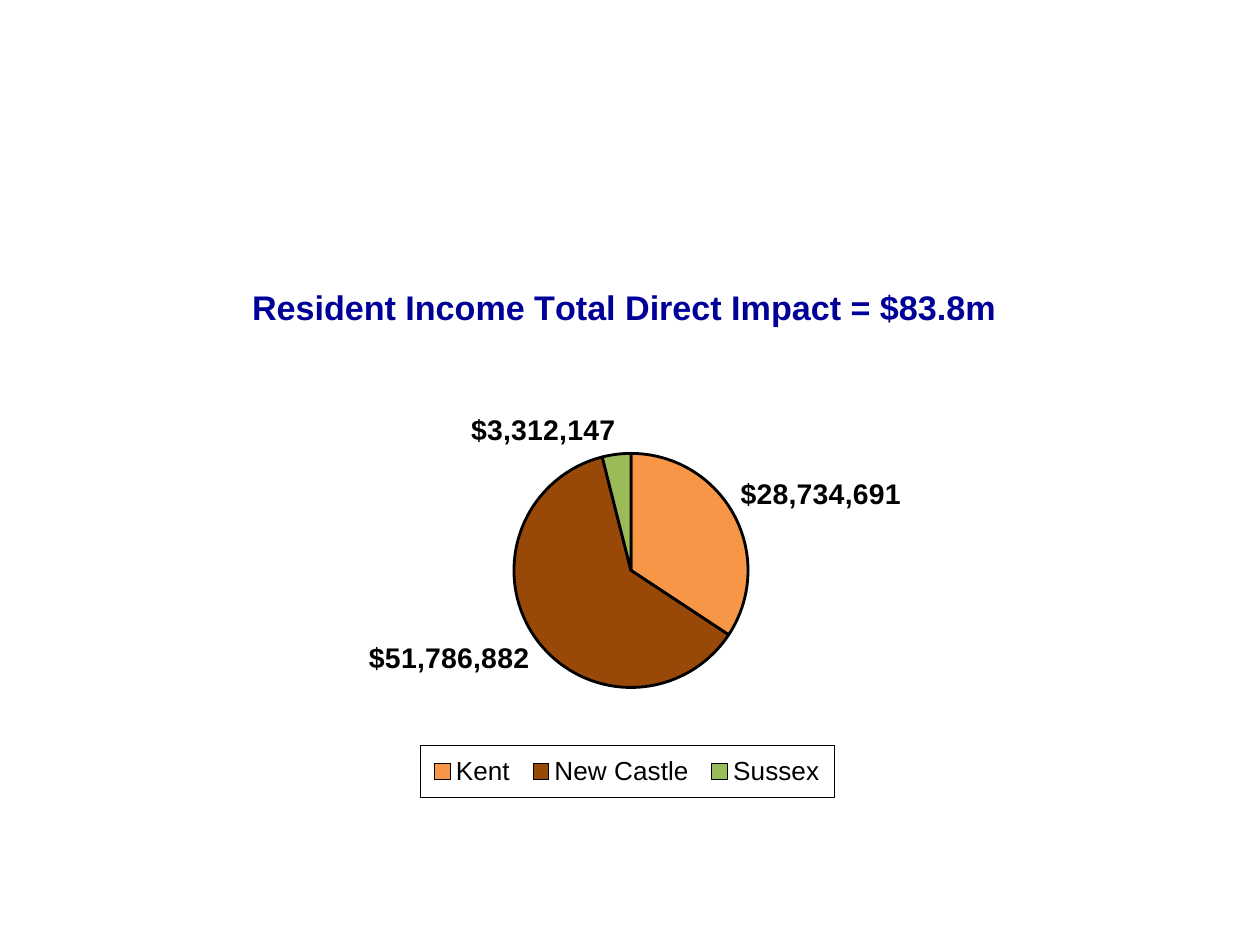
from lxml.etree import SubElement
from pptx import Presentation
from pptx.chart.data import CategoryChartData
from pptx.dml.color import RGBColor
from pptx.enum.chart import XL_CHART_TYPE, XL_LABEL_POSITION, XL_LEGEND_POSITION
from pptx.oxml import parse_xml
from pptx.oxml.ns import nsdecls, qn
from pptx.util import Pt

COLORS = {
    "title": "000099",
    "ink": "000000",
    "paper": "FFFFFF",
    "Kent": "F79646",
    "New Castle": "984807",
    "Sussex": "9BBB59",
}
INCOME = {"Kent": 28734691, "New Castle": 51786882, "Sussex": 3312147}


def write_text(frame, text, size, color, bold=False, font="Arial"):
    run = frame.paragraphs[0].add_run()
    run.text = text
    run.font.name = font
    run.font.size = Pt(size)
    run.font.bold = bold
    run.font.color.rgb = RGBColor.from_string(COLORS[color])


def place(element, index, **settings):
    for old in element.findall(qn("c:layout")):
        element.remove(old)
    layout = parse_xml(f"<c:layout {nsdecls('c')}><c:manualLayout/></c:layout>")
    for tag, value in settings.items():
        SubElement(layout[0], qn(f"c:{tag}")).set("val", str(value))
    element.insert(index, layout)


presentation = Presentation()
presentation.slide_width = Pt(720)
presentation.slide_height = Pt(540)
slide = presentation.slides.add_slide(presentation.slide_layouts[6])

income_data = CategoryChartData(number_format='"$"#,##0')
income_data.categories = list(INCOME)
income_data.add_series("Series 1", list(INCOME.values()))
chart = slide.shapes.add_chart(
    XL_CHART_TYPE.PIE, Pt(-211.7), Pt(147.6), Pt(1143.4), Pt(317.5), income_data
).chart
chart.font.name = "Arial"
chart.font.size = Pt(16.2)
chart.font.color.rgb = RGBColor.from_string(COLORS["ink"])

chart.has_title = True
write_text(chart.chart_title.text_frame,
           "Resident Income Total Direct Impact = $83.8m",
           size=19.5, color="title", bold=True)
place(chart.chart_title._element, 1, xMode="edge", yMode="edge", x=0.308, y=0.037)

pie = chart.plots[0]
pie.vary_by_categories = True
place(chart._chartSpace.chart.plotArea, 0, layoutTarget="inner",
      xMode="edge", yMode="edge", x=0.442, y=0.35, w=0.117, h=0.424)
for county, point in zip(INCOME, pie.series[0].points):
    point.format.fill.solid()
    point.format.fill.fore_color.rgb = RGBColor.from_string(COLORS[county])
    point.format.line.color.rgb = RGBColor.from_string(COLORS["ink"])
    point.format.line.width = Pt(1.62)

pie.has_data_labels = True
amounts = pie.data_labels
amounts.show_value = True
amounts.show_percentage = False
amounts.number_format = '"$"#,##0'
amounts.number_format_is_linked = False
amounts.position = XL_LABEL_POSITION.OUTSIDE_END
amounts.font.name = "Arial"
amounts.font.size = Pt(16.2)
amounts.font.bold = True
amounts.font.color.rgb = RGBColor.from_string(COLORS["ink"])

chart.has_legend = True
counties = chart.legend
counties.position = XL_LEGEND_POSITION.RIGHT
counties.include_in_layout = False
counties.font.name = "Arial"
counties.font.size = Pt(14.9)
counties.font.color.rgb = RGBColor.from_string(COLORS["ink"])
place(counties._element, 1, xMode="edge", yMode="edge", x=0.395, y=0.876, w=0.207, h=0.095)
legend_box = parse_xml(
    f"<c:spPr {nsdecls('c', 'a')}>"
    f'<a:solidFill><a:srgbClr val="{COLORS["paper"]}"/></a:solidFill>'
    f'<a:ln w="{Pt(0.4)}"><a:solidFill><a:srgbClr val="{COLORS["ink"]}"/></a:solidFill></a:ln>'
    "</c:spPr>"
)
counties._element.find(qn("c:txPr")).addprevious(legend_box)

presentation.save("out.pptx")
